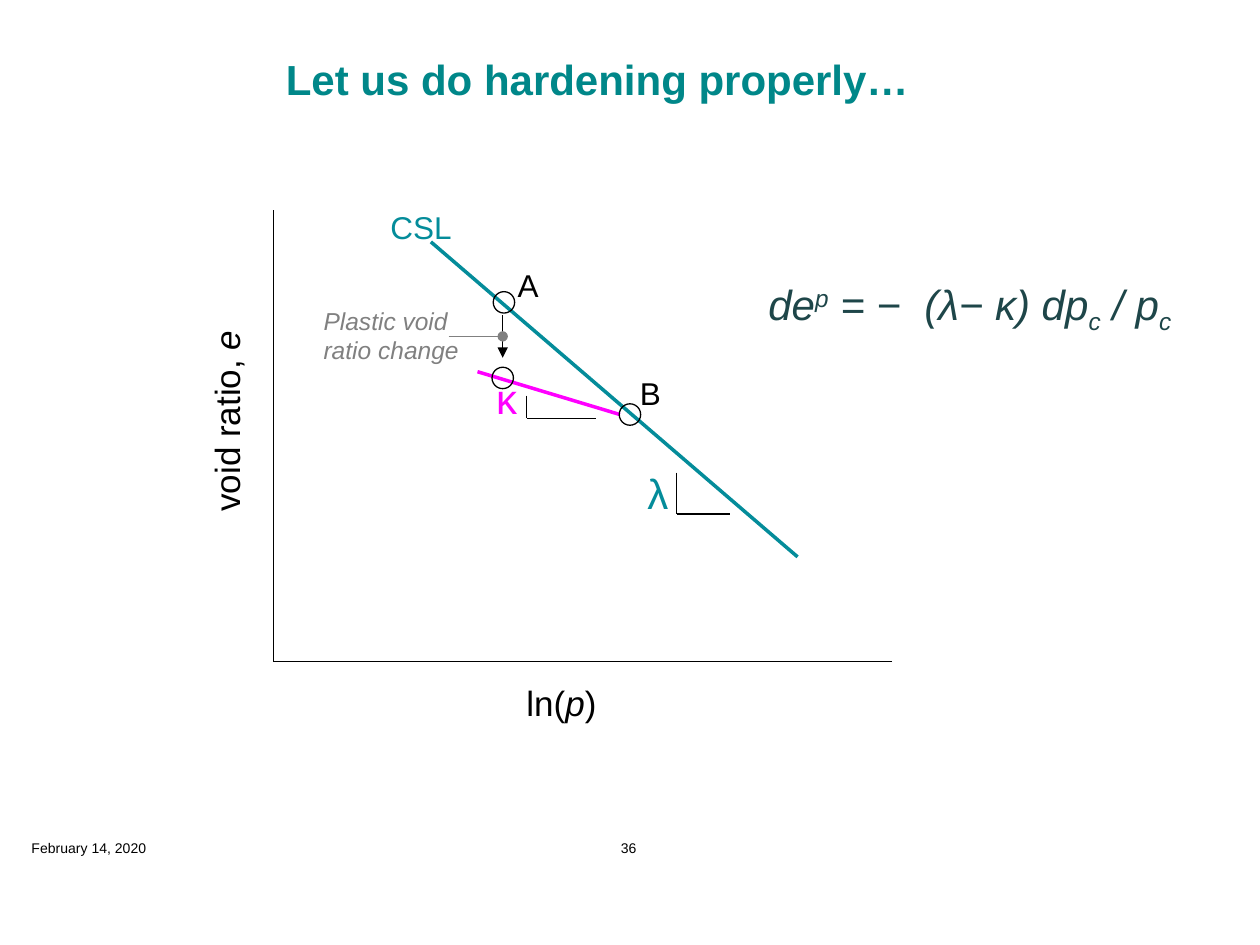
import dataclasses

import pptx
import pptx.dml.color
import pptx.enum.shapes
import pptx.enum.text
import pptx.oxml.ns
import pptx.util
from lxml import etree
from pptx.util import Inches


@dataclasses.dataclass(frozen=True)
class Theme:
    font: str = "Arial"
    black: str = "000000"
    title: str = "008789"
    teal: str = "048C9A"
    magenta: str = "FF00FF"
    gray: str = "808080"
    equation: str = "1E4649"
    footer_size: int = 8
    note_size: int = 14
    label_size: int = 18
    axis_size: int = 20
    large_size: int = 24
    thin: float = 0.75
    thick: float = 2


THEME = Theme()
ANCHOR = pptx.enum.text.MSO_ANCHOR
ALIGN = pptx.enum.text.PP_ALIGN


def rgb(value):
    return pptx.dml.color.RGBColor.from_string(value)


def add_text(slide, box, runs, size, color=THEME.black, align=ALIGN.LEFT,
             anchor=ANCHOR.TOP, inset=True, upward=False):
    shape = slide.shapes.add_textbox(*map(Inches, box))
    frame = shape.text_frame
    frame.word_wrap = True
    frame.vertical_anchor = anchor
    if not inset:
        frame.margin_left = frame.margin_right = 0
        frame.margin_top = frame.margin_bottom = 0
    if upward:
        frame._txBody.bodyPr.set("vert", "vert270")
    paragraph = frame.paragraphs[0]
    paragraph.alignment = align
    for text, style in runs:
        run = paragraph.add_run()
        run.text = text
        font = run.font
        font.name = THEME.font
        font.size = pptx.util.Pt(size)
        font.color.rgb = rgb(color)
        font.italic = "i" in style
        font.bold = "b" in style
        if "^" in style:
            font._element.set("baseline", "30000")
        if "_" in style:
            font._element.set("baseline", "-25000")


def add_line(slide, start, end, color=THEME.black, width=THEME.thin, tail=None):
    connector = slide.shapes.add_connector(
        pptx.enum.shapes.MSO_CONNECTOR.STRAIGHT, *map(Inches, (*start, *end)))
    connector.line.color.rgb = rgb(color)
    connector.line.width = pptx.util.Pt(width)
    qn = pptx.oxml.ns.qn
    if tail:
        etree.SubElement(connector.line._get_or_add_ln(), qn("a:tailEnd"), type=tail)
    etree.SubElement(connector._element.spPr, qn("a:effectLst"))


def add_state_point(slide, center, diameter=0.17):
    left, top = (value - diameter / 2 for value in center)
    shape = slide.shapes.add_shape(
        pptx.enum.shapes.MSO_SHAPE.OVAL, *map(Inches, (left, top, diameter, diameter)))
    shape.shadow.inherit = False
    shape.fill.background()
    shape.line.color.rgb = rgb(THEME.black)
    shape.line.width = pptx.util.Pt(THEME.thin)


def add_slope_mark(slide, corner, rise, run):
    x, y = corner
    add_line(slide, (x, y - rise), corner)
    add_line(slide, corner, (x + run, y))


def add_axes(slide, box):
    left, top, width, height = box
    origin = (left, top + height)
    add_line(slide, (left, top), origin)
    add_line(slide, (left + width, top + height), origin)
    add_text(slide, (left + 1.91, top + height + 0.11, 3.25, 0.44),
             [("ln(", ""), ("p", "i"), (")", "")], THEME.axis_size)
    add_text(slide, (left - 0.59, top + 0.07, 0.54, 2.42),
             [("void ratio, ", ""), ("e", "i")], THEME.axis_size, upward=True)


def add_void_ratio_plot(slide, box):
    left, top = box[:2]

    def at(x, y):
        return left + x, top + y

    add_axes(slide, box)
    add_line(slide, at(1.25, 0.25), at(4.16, 2.75), THEME.teal, THEME.thick)
    add_line(slide, at(1.62, 1.28), at(2.75, 1.62), THEME.magenta, THEME.thick)
    for center in ((1.83, 0.73), (2.83, 1.62), (1.82, 1.33)):
        add_state_point(slide, at(*center))
    add_slope_mark(slide, at(3.2, 2.41), 0.33, 0.42)
    add_slope_mark(slide, at(2.01, 1.65), 0.18, 0.55)

    labels = (
        ("CSL", 0.83, -0.07, 1.36, 0.4, THEME.label_size, THEME.teal),
        ("A", 1.84, 0.39, 0.25, 0.4, THEME.label_size, THEME.black),
        ("B", 2.81, 1.25, 0.25, 0.4, THEME.label_size, THEME.black),
        ("λ", 2.87, 1.99, 0.25, 0.5, THEME.large_size, THEME.teal),
        ("κ", 1.67, 1.24, 0.34, 0.5, THEME.large_size, THEME.magenta),
    )
    for text, x, y, width, height, size, color in labels:
        add_text(slide, (*at(x, y), width, height), [(text, "")], size, color)

    add_line(slide, at(1.82, 0.83), at(1.82, 1.17), tail="triangle")
    add_text(slide, (*at(0.3, 0.71), 1.36, 0.57),
             [("Plastic void ratio change", "i")], THEME.note_size, THEME.gray)
    add_line(slide, at(1.39, 1), at(1.82, 1), THEME.gray, tail="oval")


def add_title(slide, box):
    add_text(slide, box, [("Let us do hardening properly…", "b")],
             THEME.large_size, THEME.title, anchor=ANCHOR.MIDDLE)


def add_equation(slide, box):
    runs = [("de", "i"), ("p", "i^"), (" = −  (λ− κ) dp", "i"),
            ("c", "i_"), (" / p", "i"), ("c", "i_")]
    add_text(slide, box, runs, THEME.large_size, THEME.equation)


def add_footer(slide, box):
    left, top, width, height = box
    add_text(slide, (left, top, 2.33, height), [("February 14, 2020", "")],
             THEME.footer_size, inset=False)
    number_width = 0.76
    add_text(slide, (left + (width - number_width) / 2, top, number_width, height),
             [("36", "")], THEME.footer_size, align=ALIGN.CENTER, inset=False)


def main():
    presentation = pptx.Presentation()
    presentation.slide_width = Inches(10)
    presentation.slide_height = Inches(7.5)
    slide = presentation.slides.add_slide(presentation.slide_layouts[6])
    add_title(slide, (2.17, 0.25, 7.58, 0.75))
    add_void_ratio_plot(slide, (2.17, 1.67, 4.91, 3.58))
    add_equation(slide, (6, 2.16, 3.92, 0.5))
    add_footer(slide, (0.25, 6.66, 9.48, 0.14))
    presentation.save("out.pptx")


if __name__ == "__main__":
    main()
